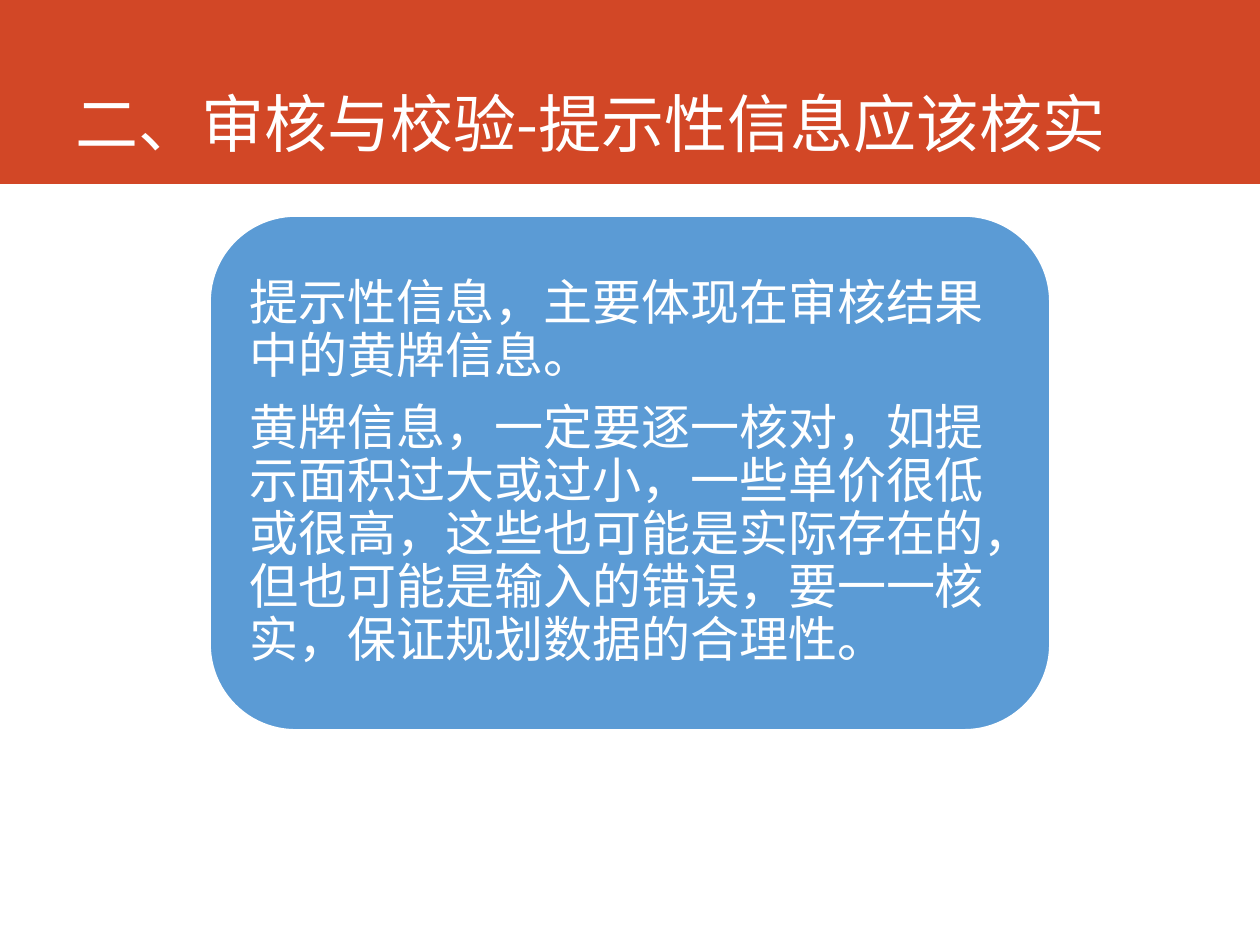
from lxml import etree
from pptx import Presentation
from pptx.dml.color import RGBColor
from pptx.enum.shapes import MSO_SHAPE
from pptx.enum.text import MSO_ANCHOR, PP_ALIGN
from pptx.oxml.ns import qn
from pptx.util import Emu, Pt

RECTANGLE, ROUNDED = MSO_SHAPE.RECTANGLE, MSO_SHAPE.ROUNDED_RECTANGLE
MIDDLE, BOTTOM = MSO_ANCHOR.MIDDLE, MSO_ANCHOR.BOTTOM
LEFT = PP_ALIGN.LEFT

TITLE = "二、审核与校验-提示性信息应该核实"
NOTES = [
    "提示性信息，主要体现在审核结果中的黄牌信息。",
    "黄牌信息，一定要逐一核对，如提示面积过大或过小，一些单价很低或很高，"
    "这些也可能是实际存在的，但也可能是输入的错误，要一一核实，保证规划数据的合理性。",
]

PX_PER_INCH = 126
PAGE = (1260, 945)
BAND = (0, 0, 1260, 184)
TITLE_BOX = (63, 0, 1111, 166)
CARD = (210, 216, 840, 514)
CARD_PADDING = 25
TEXT_INSET = 15

WHITE, RED, BLUE = "FFFFFF", "D24726", "5B9BD5"
EAST_ASIAN_FONT = "Noto Sans CJK SC"


def px(length):
    return Emu(round(length * 914400 / PX_PER_INCH))


def color(value):
    return RGBColor.from_string(value)


def add_panel(page, kind, bounds, fill, line=None):
    panel = page.shapes.add_shape(kind, *map(px, bounds))
    panel.shadow.inherit = False
    panel.fill.solid()
    panel.fill.fore_color.rgb = color(fill)
    if line:
        panel.line.color.rgb = color(line)
        panel.line.width = Pt(1)
    else:
        panel.line.fill.background()
    return panel


def write(frame, paragraphs, *, size, font, anchor, spacing=1.0, after=0):
    frame.word_wrap = True
    frame.vertical_anchor = anchor
    for index, text in enumerate(paragraphs):
        para = frame.add_paragraph() if index else frame.paragraphs[0]
        para.alignment = LEFT
        para.line_spacing = spacing
        para.space_before = Pt(0)
        para.space_after = Pt(after)
        span = para.add_run()
        span.text = text
        span.font.size = Pt(size)
        span.font.name = font
        span.font.color.rgb = color(WHITE)
        east_asian = etree.SubElement(span.font._element, qn("a:ea"))
        east_asian.set("typeface", EAST_ASIAN_FONT)


def main():
    deck = Presentation()
    deck.slide_width, deck.slide_height = map(px, PAGE)
    page = deck.slides.add_slide(deck.slide_layouts.get_by_name("Title Only"))

    band = add_panel(page, RECTANGLE, BAND, RED)
    title = page.shapes.title
    title._element.addprevious(band._element)
    title.left, title.top, title.width, title.height = map(px, TITLE_BOX)
    write(title.text_frame, [TITLE], size=36, font=EAST_ASIAN_FONT, anchor=BOTTOM)

    add_panel(page, ROUNDED, CARD, BLUE, WHITE)
    left, top, width, height = CARD
    text_bounds = (left + CARD_PADDING, top + CARD_PADDING,
                   width - 2 * CARD_PADDING, height - 2 * CARD_PADDING)
    box = page.shapes.add_textbox(*map(px, text_bounds))
    frame = box.text_frame
    frame.margin_left = frame.margin_right = px(TEXT_INSET)
    frame.margin_top = frame.margin_bottom = px(TEXT_INSET)
    write(frame, NOTES, size=28, font="Karla", anchor=MIDDLE, spacing=0.9, after=11)

    deck.save("out.pptx")


if __name__ == "__main__":
    main()
